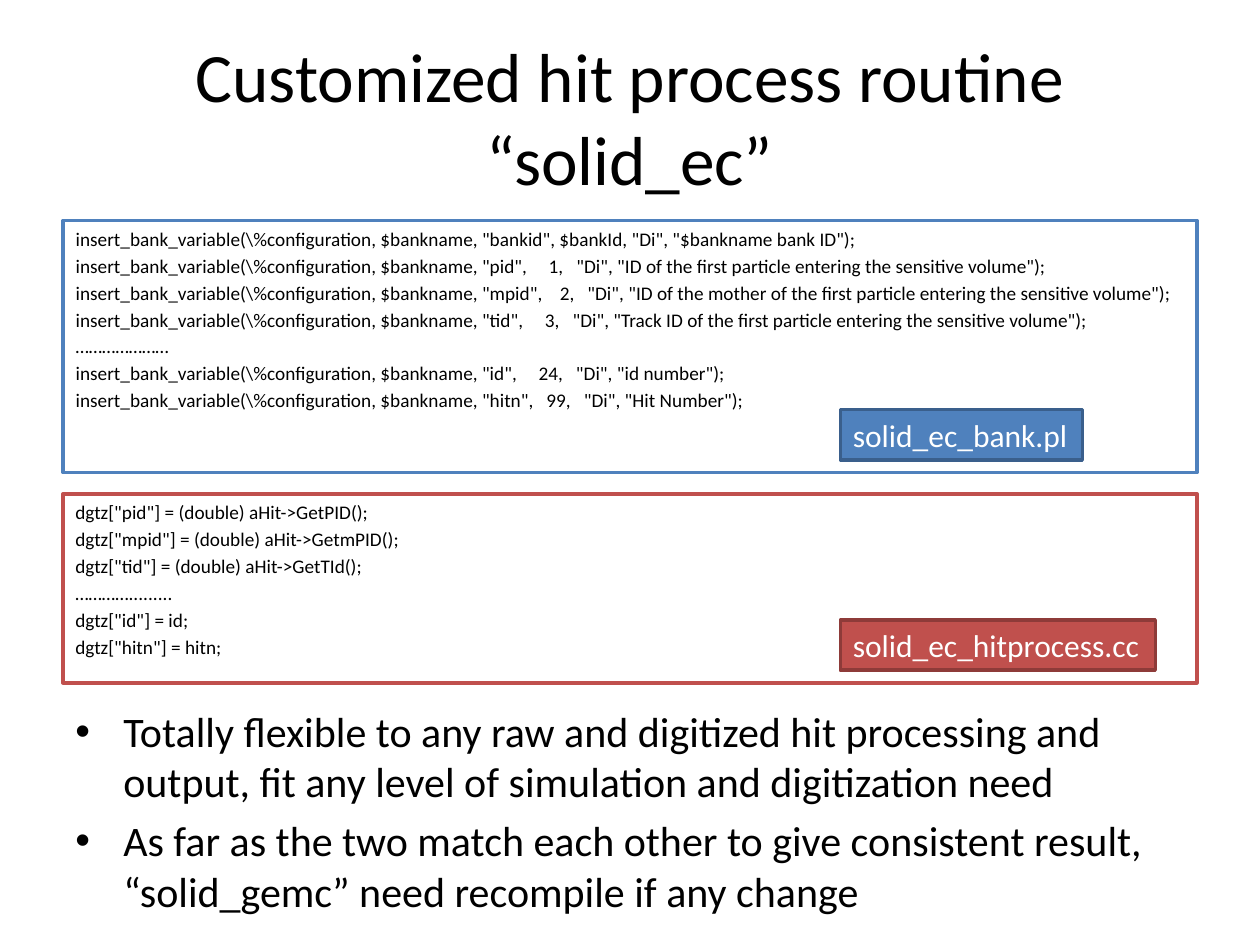
from lxml import etree
from pptx import Presentation
from pptx.dml.color import RGBColor
from pptx.enum.shapes import MSO_SHAPE
from pptx.enum.text import MSO_ANCHOR, MSO_AUTO_SIZE, PP_ALIGN
from pptx.oxml.ns import qn
from pptx.util import Inches, Pt

RECT = MSO_SHAPE.RECTANGLE
TOP, MIDDLE = MSO_ANCHOR.TOP, MSO_ANCHOR.MIDDLE
FIXED, GROW = MSO_AUTO_SIZE.NONE, MSO_AUTO_SIZE.SHAPE_TO_FIT_TEXT
LEFT, CENTER = PP_ALIGN.LEFT, PP_ALIGN.CENTER

COLORS = {
    "black": "000000",
    "white": "FFFFFF",
    "blue": "4F81BD",
    "navy": "3A5F8C",
    "red": "C0504D",
    "maroon": "8E3B39",
}

CALL = "insert_bank_variable(\\%configuration, $bankname, "
BANK = [
    CALL + '"bankid", $bankId, "Di", "$bankname bank ID");',
    CALL + '"pid",     1,   "Di", "ID of the first particle entering the sensitive volume");',
    CALL + '"mpid",    2,   "Di", "ID of the mother of the first particle entering the sensitive volume");',
    CALL + '"tid",     3,   "Di", "Track ID of the first particle entering the sensitive volume");',
    "…………………",
    CALL + '"id",     24,   "Di", "id number");',
    CALL + '"hitn",   99,   "Di", "Hit Number");',
]
HITS = [
    'dgtz["pid"] = (double) aHit->GetPID();',
    'dgtz["mpid"] = (double) aHit->GetmPID();',
    'dgtz["tid"] = (double) aHit->GetTId();',
    "………….........",
    'dgtz["id"] = id;',
    'dgtz["hitn"] = hitn;',
]
NOTES = [
    "Totally flexible to any raw and digitized hit processing and output, "
    "fit any level of simulation and digitization need",
    "As far as the two match each other to give consistent result, "
    "“solid_gemc” need recompile if any change",
]


class Deck:
    font = "Calibri"
    border = Pt(2)
    hang = Inches(0.38)

    def __init__(self, slide):
        self.slide = slide

    def color(self, name):
        return RGBColor.from_string(COLORS[name])

    def place(self, shape, x, y, w, h):
        shape.left, shape.top = Inches(x), Inches(y)
        shape.width, shape.height = Inches(w), Inches(h)

    def paint(self, shape, fill, line):
        shape.fill.solid()
        shape.fill.fore_color.rgb = self.color(fill)
        shape.line.color.rgb = self.color(line)
        shape.line.width = self.border

    def letter(self, shape, lines, size, color="black", align=LEFT,
               anchor=TOP, fit=FIXED):
        frame = shape.text_frame
        frame.text = "\n".join(lines)
        frame.word_wrap = fit == FIXED
        frame.auto_size = fit
        frame.vertical_anchor = anchor
        for para in frame.paragraphs:
            para.alignment = align
            for run in para.runs:
                run.font.name = self.font
                run.font.size = Pt(size)
                run.font.color.rgb = self.color(color)

    def indent(self, shape, bullet=None):
        for para in shape.text_frame.paragraphs:
            props = para._p.get_or_add_pPr()
            props.set("marL", str(self.hang))
            props.set("indent", str(-self.hang))
            before = etree.SubElement(props, qn("a:spcBef"))
            etree.SubElement(before, qn("a:spcPct"), val="20000")
            if bullet:
                etree.SubElement(props, qn("a:buFont"), typeface="Arial")
                etree.SubElement(props, qn("a:buChar"), char=bullet)
            else:
                etree.SubElement(props, qn("a:buNone"))

    def rect(self, x, y, w, h):
        shape = self.slide.shapes.add_shape(
            RECT, Inches(x), Inches(y), Inches(w), Inches(h))
        shape.shadow.inherit = False
        return shape

    def title(self, text, x, y, w, h):
        shape = self.slide.shapes.title
        self.place(shape, x, y, w, h)
        self.letter(shape, [text], 39.6, align=CENTER, anchor=MIDDLE)

    def code(self, shape, lines, line):
        self.paint(shape, "white", line)
        self.letter(shape, lines, 11)
        self.indent(shape)

    def body(self, lines, line, x, y, w, h):
        shape = self.slide.placeholders[1]
        self.place(shape, x, y, w, h)
        self.code(shape, lines, line)

    def panel(self, lines, line, x, y, w, h):
        self.code(self.rect(x, y, w, h), lines, line)

    def label(self, text, fill, line, x, y, w, h):
        shape = self.rect(x, y, w, h)
        self.paint(shape, fill, line)
        self.letter(shape, [text], 18, "white", fit=GROW)

    def bullets(self, lines, x, y, w, h):
        shape = self.slide.shapes.add_textbox(
            Inches(x), Inches(y), Inches(w), Inches(h))
        self.letter(shape, lines, 24)
        self.indent(shape, "•")


def main():
    prs = Presentation()
    prs.slide_width, prs.slide_height = Inches(10), Inches(7.5)
    deck = Deck(prs.slides.add_slide(prs.slide_layouts[1]))
    deck.title("Customized hit process routine “solid_ec”", 0.5, 0.3, 9, 1.25)
    deck.body(BANK, "blue", 0.5, 1.75, 9, 2)
    deck.panel(HITS, "red", 0.5, 3.92, 9, 1.5)
    deck.label("solid_ec_bank.pl", "blue", "navy", 6.67, 3.25, 1.92, 0.4)
    deck.label("solid_ec_hitprocess.cc", "red", "maroon", 6.67, 4.92, 2.5, 0.4)
    deck.bullets(NOTES, 0.5, 5.55, 9.08, 4.95)
    prs.save("out.pptx")


if __name__ == "__main__":
    main()
